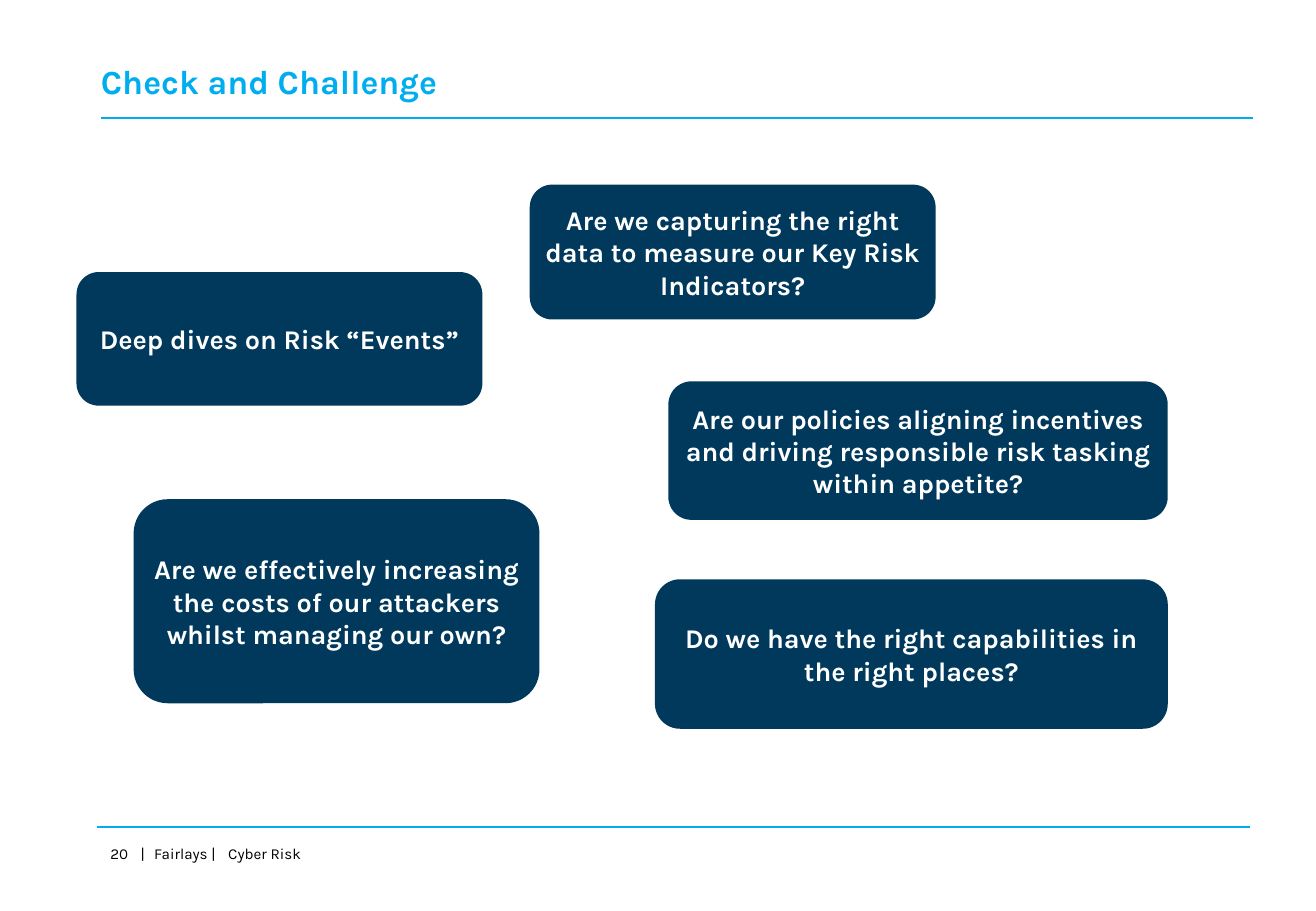
from dataclasses import dataclass

from lxml.etree import SubElement
from pptx import Presentation
from pptx.dml.color import RGBColor
from pptx.enum.shapes import MSO_CONNECTOR, MSO_SHAPE
from pptx.enum.text import MSO_ANCHOR, PP_ALIGN
from pptx.oxml.ns import qn
from pptx.slide import Slide
from pptx.text.text import TextFrame, _Paragraph
from pptx.util import Emu, Pt

EMU_PER_PX = 9144
FONT = "Karla"
CYAN = "00AEEF"
NAVY = "00395C"
WHITE = "FFFFFF"
BLACK = "000000"


@dataclass(frozen=True)
class Rule:
    left: int
    right: int
    top: int


@dataclass(frozen=True)
class Question:
    left: int
    top: int
    width: int
    height: int
    text: str


RULES = [Rule(80, 1029, 681), Rule(83, 1031, 97)]
QUESTIONS = [
    Question(63, 224, 334, 110, "Deep dives on Risk “Events”"),
    Question(539, 477, 422, 123, "Do we have the right capabilities in the right places?"),
    Question(436, 152, 334, 111,
             "Are we capturing the right data to measure our Key Risk Indicators?"),
    Question(110, 411, 334, 168,
             "Are we effectively increasing the costs of our attackers "
             "whilst managing our own?"),
    Question(550, 314, 411, 114,
             "Are our policies aligning incentives and driving responsible "
             "risk tasking within appetite?"),
]
FOOTER = "20\t|\tFairlays |\tCyber Risk"
FOOTER_TABS = [25, 36, 97]


def px(length: int) -> Emu:
    return Emu(length * EMU_PER_PX)


def colour(value: str) -> RGBColor:
    return RGBColor.from_string(value)


def clear_margins(frame: TextFrame) -> None:
    frame.margin_left = frame.margin_right = 0
    frame.margin_top = frame.margin_bottom = 0
    frame.vertical_anchor = MSO_ANCHOR.MIDDLE
    frame.word_wrap = True


def style(para: _Paragraph, size: int, ink: str, bold: bool, align: PP_ALIGN) -> None:
    para.alignment = align
    para.font.name = FONT
    para.font.size = Pt(size)
    para.font.bold = bold
    para.font.color.rgb = colour(ink)


def add_title(page: Slide, text: str) -> None:
    title = page.shapes.title
    title.left, title.top, title.width, title.height = map(px, (83, 50, 955, 34))
    clear_margins(title.text_frame)
    title.text_frame.text = text
    style(title.text_frame.paragraphs[0], 20, CYAN, True, PP_ALIGN.LEFT)


def add_rule(page: Slide, rule: Rule) -> None:
    line = page.shapes.add_connector(
        MSO_CONNECTOR.STRAIGHT, px(rule.left), px(rule.top), px(rule.right), px(rule.top))
    line.line.color.rgb = colour(CYAN)
    line.line.width = Pt(1)
    SubElement(line._element.spPr, qn("a:effectLst"))


def add_question(page: Slide, question: Question) -> None:
    box = page.shapes.add_shape(
        MSO_SHAPE.ROUNDED_RECTANGLE, px(question.left), px(question.top),
        px(question.width), px(question.height))
    box.shadow.inherit = False
    box.fill.solid()
    box.fill.fore_color.rgb = colour(NAVY)
    box.line.fill.background()
    clear_margins(box.text_frame)
    box.text_frame.text = question.text
    style(box.text_frame.paragraphs[0], 16, WHITE, True, PP_ALIGN.CENTER)


def add_footer(page: Slide) -> None:
    box = page.shapes.add_textbox(px(81), px(690), px(682), px(15))
    box.text_frame.word_wrap = True
    para = box.text_frame.paragraphs[0]
    para.add_run().text = FOOTER
    tabs = SubElement(para._p.get_or_add_pPr(), qn("a:tabLst"))
    for position in FOOTER_TABS:
        SubElement(tabs, qn("a:tab"), pos=str(px(position)), algn="l")
    style(para, 9, BLACK, False, PP_ALIGN.LEFT)


def main() -> None:
    deck = Presentation()
    deck.slide_width, deck.slide_height = px(1083), px(750)
    page = deck.slides.add_slide(deck.slide_layouts.get_by_name("Title Only"))
    add_title(page, "Check and Challenge")
    for rule in RULES:
        add_rule(page, rule)
    for question in QUESTIONS:
        add_question(page, question)
    add_footer(page)
    deck.save("out.pptx")


if __name__ == "__main__":
    main()
